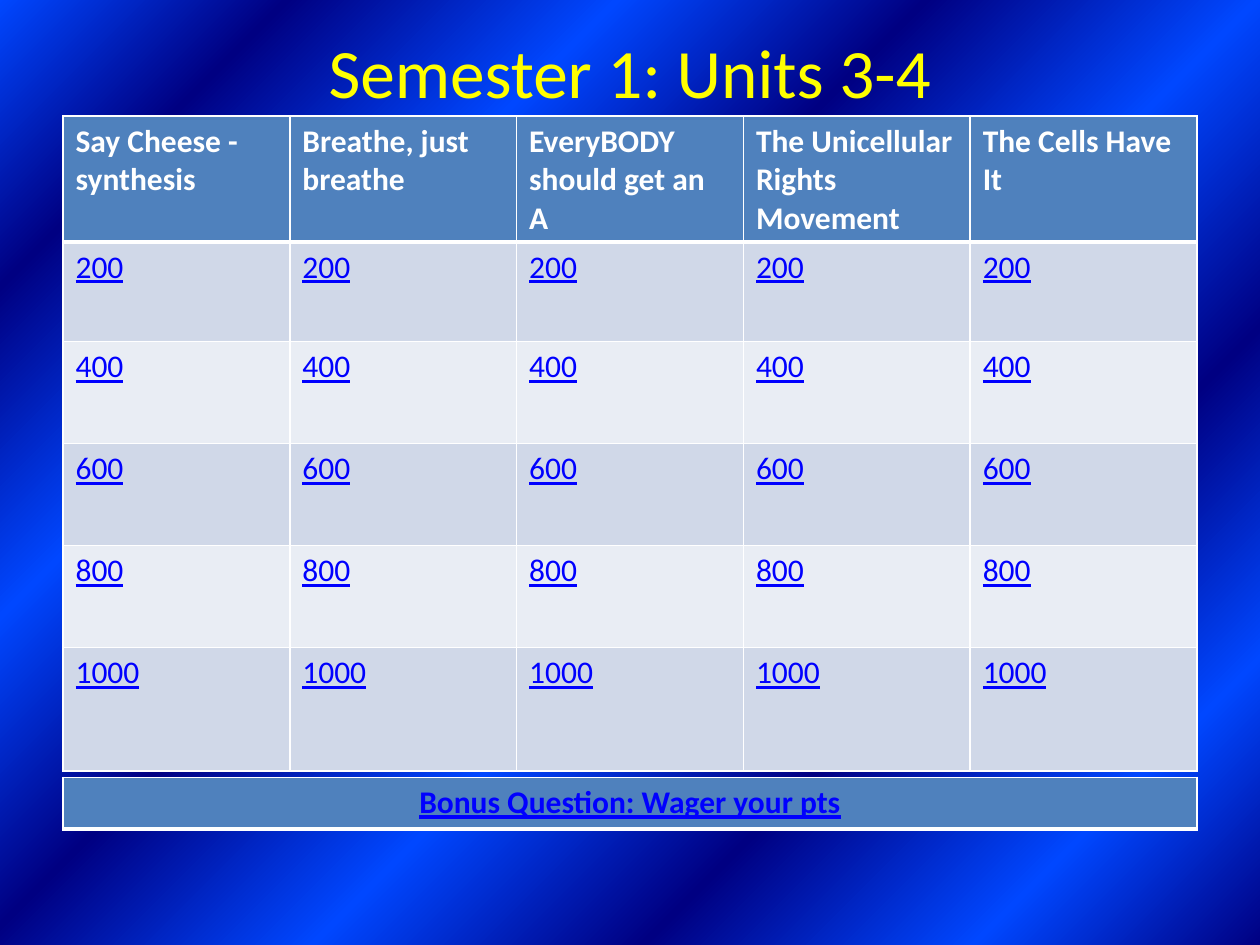
import pptx
import pptx.util
import pptx.dml.color
import pptx.enum.text
import pptx.oxml
import pptx.oxml.ns
import lxml.etree

TITLE = "Semester 1: Units 3-4"
CATEGORIES = ["Say Cheese - synthesis", "Breathe, just breathe",
              "EveryBODY should get an A", "The Unicellular Rights Movement",
              "The Cells Have It"]
POINTS = ["200", "400", "600", "800", "1000"]
BONUS = "Bonus Question: Wager your pts"

C = {"title": "FFFF00", "white": "FFFFFF", "link": "0000FF", "header": "4F81BD",
     "odd": "D0D8E8", "even": "E9EDF4", "dark": "000082", "bright": "0047FF"}
BAND_STOPS = [0, 13, 28, 43, 58, 72, 87, 100]
FONT = "Calibri"
W, H = 10, 7.5
MARGIN = 0.05 * W
BOARD_W = W - 2 * MARGIN
BOARD_TOP, BONUS_TOP = 0.92, 6.17
ROW_HEIGHTS = [0.98, 0.79, 0.81, 0.81, 0.81, 0.98]
BONUS_H = 0.41

Inches, Pt = pptx.util.Inches, pptx.util.Pt
rgb = pptx.dml.color.RGBColor.from_string
CENTER = pptx.enum.text.PP_ALIGN.CENTER


def set_background(s):
    """Fill the slide with alternating bands spreading from the lower right corner."""
    stops = "".join(
        f'<a:gs pos="{pos * 1000}"><a:srgbClr val="{C["bright" if i % 2 else "dark"]}"/></a:gs>'
        for i, pos in enumerate(BAND_STOPS))
    bg = pptx.oxml.parse_xml(
        f'<p:bg {pptx.oxml.ns.nsdecls("p", "a")}><p:bgPr><a:gradFill rotWithShape="1">'
        f'<a:gsLst>{stops}</a:gsLst><a:path path="circle">'
        '<a:fillToRect l="100000" t="100000"/></a:path></a:gradFill>'
        '<a:effectLst/></p:bgPr></p:bg>')
    s._element.cSld.insert(0, bg)


def add_run(p, text, size, color, bold=False, underline=False):
    r = p.add_run()
    r.text = text
    f = r.font
    f.name, f.size, f.bold, f.underline = FONT, Pt(size), bold, underline
    f.color.rgb = rgb(color)


def set_borders(cell, top=1, bottom=1):
    """Draw white cell edges; top and bottom are widths in points."""
    tcPr = cell._tc.get_or_add_tcPr()
    edges = [("lnL", 1), ("lnR", 1), ("lnT", top), ("lnB", bottom)]
    for i, (tag, width) in enumerate(edges):
        ln = pptx.oxml.parse_xml(
            f'<a:{tag} {pptx.oxml.ns.nsdecls("a")} w="{Pt(width)}"><a:solidFill>'
            f'<a:srgbClr val="{C["white"]}"/></a:solidFill></a:{tag}>')
        tcPr.insert(i, ln)


def add_grid(s, rows, top, heights):
    n = len(rows[0])
    tbl = s.shapes.add_table(len(rows), n, Inches(MARGIN), Inches(top),
                             Inches(BOARD_W), Inches(sum(heights))).table
    for col in tbl.columns:
        col.width = Inches(BOARD_W / n)
    for i, (texts, height) in enumerate(zip(rows, heights)):
        tbl.rows[i].height = Inches(height)
        fill = C["header"] if i == 0 else C["odd" if i % 2 else "even"]
        for j, text in enumerate(texts):
            cell = tbl.cell(i, j)
            cell.fill.solid()
            cell.fill.fore_color.rgb = rgb(fill)
            set_borders(cell, top=3 if i == 1 else 1, bottom=3 if i == 0 else 1)
            link = text not in CATEGORIES
            add_run(cell.text_frame.paragraphs[0], text, 18,
                    C["link" if link else "white"], bold=i == 0, underline=link)
    return tbl


prs = pptx.Presentation()
prs.slide_width, prs.slide_height = Inches(W), Inches(H)
s = prs.slides.add_slide(prs.slide_layouts[6])
set_background(s)

tf = s.shapes.add_textbox(Inches(MARGIN), Inches(0.04 * H),
                          Inches(BOARD_W), Inches(0.53)).text_frame
tf.word_wrap = True
tf.vertical_anchor = pptx.enum.text.MSO_ANCHOR.MIDDLE
tf.paragraphs[0].alignment = CENTER
add_run(tf.paragraphs[0], TITLE, 39.6, C["title"])

board = [CATEGORIES] + [[value] * len(CATEGORIES) for value in POINTS]
add_grid(s, board, BOARD_TOP, ROW_HEIGHTS)
bonus = add_grid(s, [[BONUS]], BONUS_TOP, [BONUS_H])
bonus.cell(0, 0).text_frame.paragraphs[0].alignment = CENTER

prs.save("out.pptx")
